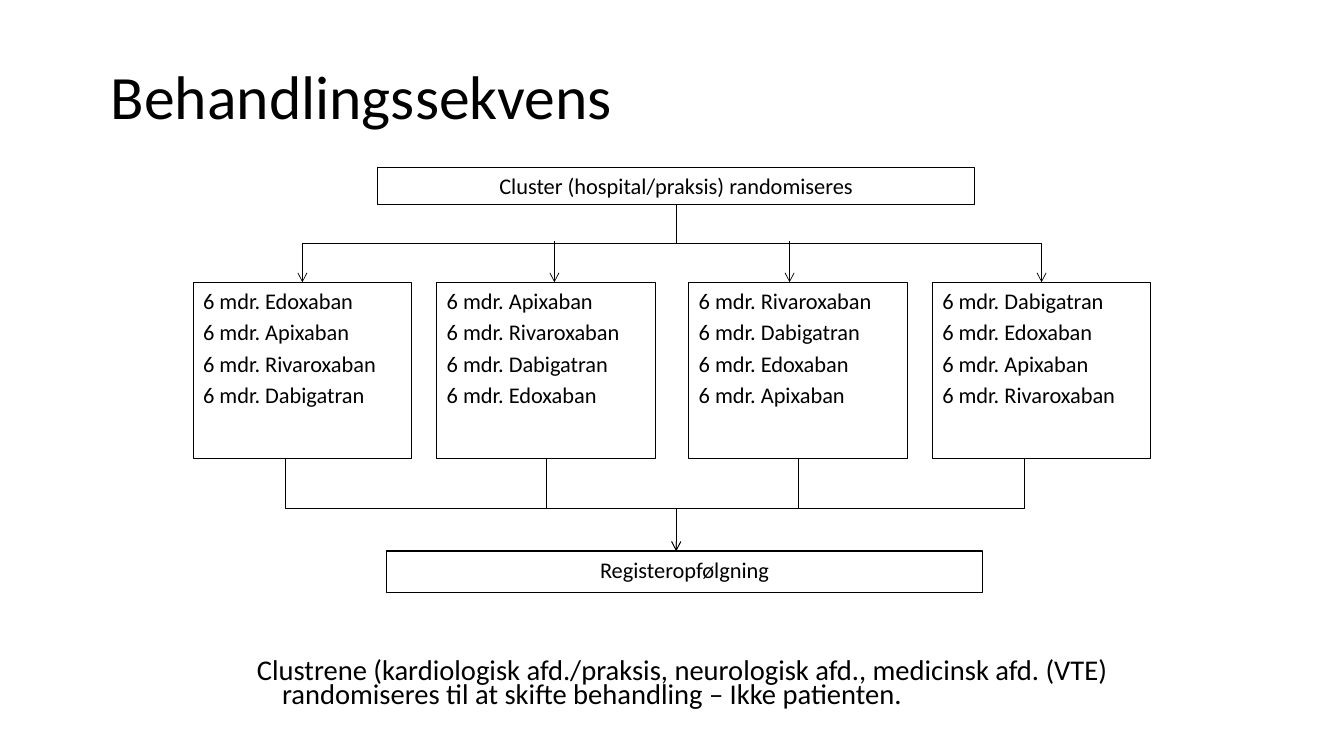
from dataclasses import dataclass

import pptx
import pptx.dml.color
import pptx.enum.shapes
import pptx.enum.text
import pptx.oxml
import pptx.oxml.ns
import pptx.util
from lxml import etree

Pt = pptx.util.Pt
ALIGN = pptx.enum.text.PP_ALIGN
ANCHOR = pptx.enum.text.MSO_ANCHOR
CONNECTOR = pptx.enum.shapes.MSO_CONNECTOR


@dataclass(frozen=True)
class Theme:
    ink: pptx.dml.color.RGBColor = pptx.dml.color.RGBColor(0, 0, 0)
    font: str = "Calibri"
    title_size: float = 44
    box_size: float = 16
    note_size: float = 20.4
    box_line: float = 0.75
    connector_line: float = 0.5


@dataclass(frozen=True)
class Box:
    left: float
    top: float
    width: float
    height: float
    lines: tuple[str, ...]
    align: ALIGN = ALIGN.LEFT


@dataclass(frozen=True)
class Elbow:
    start_x: float
    start_y: float
    bus_y: float
    end_x: float
    end_y: float


THEME = Theme()

# Flow positions
STEM_X = 483
CLUSTER_BOTTOM = 146.4
UPPER_BUS = 174
ARM_TOP, ARM_WIDTH, ARM_HEIGHT = 201.6, 156, 126
ARM_BOTTOM = ARM_TOP + ARM_HEIGHT
LOWER_BUS = 363.2
REGISTER_TOP = 393.6

# Each arm starts one drug further along the sequence
DRUGS = ("Edoxaban", "Apixaban", "Rivaroxaban", "Dabigatran")
ARMS = [
    Box(left, ARM_TOP, ARM_WIDTH, ARM_HEIGHT,
        tuple(f"6 mdr. {drug}" for drug in DRUGS[shift:] + DRUGS[:shift]))
    for shift, left in enumerate((138, 312, 492, 666))
]
CLUSTER = Box(270, 119.4, 426, 27, ("Cluster (hospital/praksis) randomiseres",), ALIGN.CENTER)
REGISTER = Box(276, REGISTER_TOP, 426, 30, ("Registeropfølgning",), ALIGN.CENTER)

ELBOWS = [
    *(Elbow(STEM_X, CLUSTER_BOTTOM, UPPER_BUS, x, ARM_TOP) for x in (216, 744)),
    *(Elbow(x, ARM_BOTTOM, LOWER_BUS, STEM_X, REGISTER_TOP) for x in (204, 732)),
]


def add_text(paragraph, text: str, size: float) -> None:
    run = paragraph.add_run()
    run.text = text
    run.font.size = Pt(size)
    run.font.name = THEME.font
    run.font.color.rgb = THEME.ink


def hang(paragraph, indent: float) -> None:
    properties = paragraph._p.get_or_add_pPr()
    properties.set("marL", str(Pt(indent)))
    properties.set("indent", str(-Pt(indent)))


def add_box(slide, box: Box):
    shape = slide.shapes.add_shape(
        pptx.enum.shapes.MSO_SHAPE.RECTANGLE,
        Pt(box.left), Pt(box.top), Pt(box.width), Pt(box.height))
    shape.shadow.inherit = False
    shape.fill.background()
    shape.line.color.rgb = THEME.ink
    shape.line.width = Pt(THEME.box_line)
    frame = shape.text_frame
    frame.word_wrap = True
    frame.vertical_anchor = ANCHOR.TOP
    for index, line in enumerate(box.lines):
        paragraph = frame.add_paragraph() if index else frame.paragraphs[0]
        paragraph.alignment = box.align
        paragraph.space_before = Pt(0.2 * THEME.box_size if index else 0)
        hang(paragraph, 27)
        add_text(paragraph, line, THEME.box_size)
    return shape


def style_connector(connector, arrow: bool) -> None:
    connector.line.color.rgb = THEME.ink
    connector.line.width = Pt(THEME.connector_line)
    properties = connector._element.spPr
    if arrow:
        line = properties.find(pptx.oxml.ns.qn("a:ln"))
        etree.SubElement(line, pptx.oxml.ns.qn("a:tailEnd"), type="arrow")
    etree.SubElement(properties, pptx.oxml.ns.qn("a:effectLst"))


def add_vertical(slide, x: float, top: float, bottom: float, arrow: bool):
    connector = slide.shapes.add_connector(
        CONNECTOR.STRAIGHT, Pt(x), Pt(top), Pt(x), Pt(bottom))
    style_connector(connector, arrow)
    return connector


def add_elbow(slide, elbow: Elbow) -> None:
    # The preset runs sideways, so it is turned a quarter about its centre
    drop = elbow.end_y - elbow.start_y
    reach = abs(elbow.end_x - elbow.start_x)
    left = (elbow.start_x + elbow.end_x - drop) / 2
    top = (elbow.start_y + elbow.end_y - reach) / 2
    connector = slide.shapes.add_connector(
        CONNECTOR.ELBOW, Pt(left), Pt(top), Pt(left + drop), Pt(top + reach))
    transform = connector._element.spPr.find(pptx.oxml.ns.qn("a:xfrm"))
    if elbow.end_x < elbow.start_x:
        transform.set("rot", "5400000")
    else:
        transform.set("rot", "16200000")
        transform.set("flipH", "1")
    geometry = connector._element.spPr.find(pptx.oxml.ns.qn("a:prstGeom"))
    adjustments = geometry.find(pptx.oxml.ns.qn("a:avLst"))
    if adjustments is None:
        adjustments = etree.SubElement(geometry, pptx.oxml.ns.qn("a:avLst"))
    bend = round((elbow.bus_y - elbow.start_y) / drop * 100000)
    etree.SubElement(adjustments, pptx.oxml.ns.qn("a:gd"), name="adj1", fmla=f"val {bend}")
    style_connector(connector, True)


def add_title(slide, text: str) -> None:
    title = slide.shapes.title
    title.left, title.top, title.width, title.height = Pt(72), Pt(40.3), Pt(648), Pt(61.2)
    title.text_frame.vertical_anchor = ANCHOR.MIDDLE
    paragraph = title.text_frame.paragraphs[0]
    paragraph.alignment = ALIGN.LEFT
    paragraph.line_spacing = 0.9
    add_text(paragraph, text, THEME.title_size)


def add_note(slide, text: str) -> None:
    note = slide.shapes.add_textbox(Pt(176.4), Pt(468.7), Pt(671.8), Pt(41.8))
    note.text_frame.word_wrap = True
    paragraph = note.text_frame.paragraphs[0]
    paragraph.line_spacing = 0.7
    hang(paragraph, 18)
    add_text(paragraph, text, THEME.note_size)


def main() -> None:
    presentation = pptx.Presentation()
    presentation.slide_width, presentation.slide_height = Pt(960), Pt(540)
    slide = presentation.slides.add_slide(presentation.slide_layouts[5])
    add_title(slide, "Behandlingssekvens")

    # Boxes
    add_box(slide, CLUSTER)
    arms = [add_box(slide, arm) for arm in ARMS]
    add_box(slide, REGISTER)

    # Connectors: outer arms by elbows, inner arms by straight lines
    for elbow in ELBOWS:
        add_elbow(slide, elbow)
    for x in (396, 564):
        add_vertical(slide, x, 172, ARM_TOP, True)
    for arm, shape in zip(ARMS[1:3], arms[1:3]):
        x = arm.left + arm.width / 2
        add_vertical(slide, x, ARM_BOTTOM, LOWER_BUS, False).begin_connect(shape, 2)

    add_note(slide, "Clustrene (kardiologisk afd./praksis, neurologisk afd., medicinsk afd. (VTE) "
                    "randomiseres til at skifte behandling – Ikke patienten.")
    presentation.save("out.pptx")


if __name__ == "__main__":
    main()
